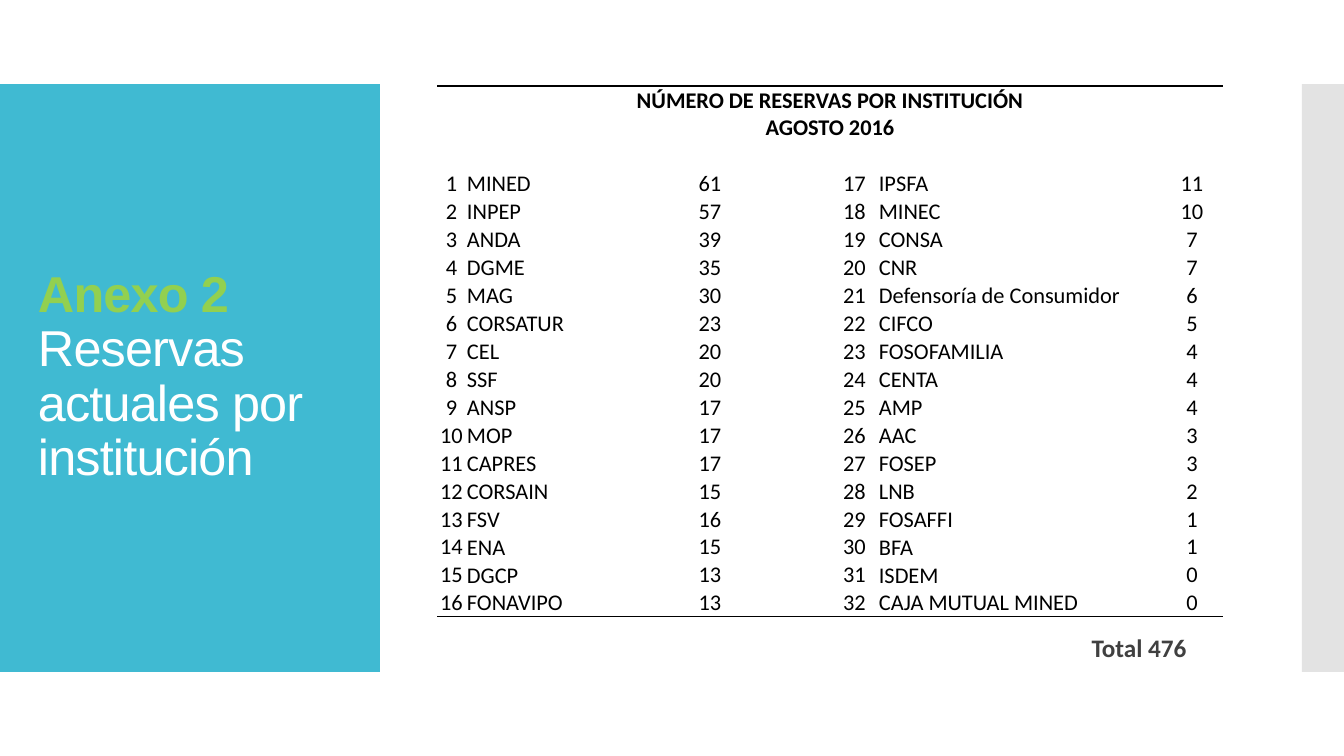
from dataclasses import dataclass
from typing import NamedTuple

from lxml.etree import SubElement
from pptx import Presentation
from pptx.dml.color import RGBColor
from pptx.enum.shapes import MSO_SHAPE
from pptx.enum.text import MSO_ANCHOR, PP_ALIGN
from pptx.oxml import parse_xml
from pptx.oxml.ns import nsdecls, qn
from pptx.util import Pt

SCALE = 914400 / 100.8
COLORS = {
    "panel": "40BAD2",
    "strip": "C8C8C8",
    "accent": "92D050",
    "white": "FFFFFF",
    "black": "000000",
    "gray": "404040",
}
COLS = (29, 215, 58, 92, 47, 283, 62)
HEAD = ("NÚMERO DE RESERVAS POR INSTITUCIÓN", "AGOSTO 2016")
HEAD_H = 83
ROW_H = 28
PLAIN = "{2D5ABB26-0587-4C30-8999-92F81FD0307C}"


class Box(NamedTuple):
    left: int
    top: int
    width: int
    height: int


@dataclass
class Panel:
    box: Box
    color: str
    alpha: int = 100


@dataclass
class Style:
    font: str
    size: int
    color: str
    bold: bool = False


class Entry(NamedTuple):
    name: str
    count: int


PANELS = (
    Panel(Box(0, 84, 380, 588), "panel"),
    Panel(Box(1302, 84, 42, 588), "strip", 50),
)
ENTRIES = [Entry(*pair) for pair in (
    ("MINED", 61), ("INPEP", 57), ("ANDA", 39), ("DGME", 35),
    ("MAG", 30), ("CORSATUR", 23), ("CEL", 20), ("SSF", 20),
    ("ANSP", 17), ("MOP", 17), ("CAPRES", 17), ("CORSAIN", 15),
    ("FSV", 16), ("ENA", 15), ("DGCP", 13), ("FONAVIPO", 13),
    ("IPSFA", 11), ("MINEC", 10), ("CONSA", 7), ("CNR", 7),
    ("Defensoría de Consumidor", 6), ("CIFCO", 5), ("FOSOFAMILIA", 4), ("CENTA", 4),
    ("AMP", 4), ("AAC", 3), ("FOSEP", 3), ("LNB", 2),
    ("FOSAFFI", 1), ("BFA", 1), ("ISDEM", 0), ("CAJA MUTUAL MINED", 0),
)]
HALF = len(ENTRIES) // 2
BODY = Style("Calibri", 16, "black")
BOLD = Style("Calibri", 16, "black", True)


def px(size: int) -> int:
    return round(size * SCALE)


def place(box: Box) -> list[int]:
    return [px(side) for side in box]


def add_run(para, text: str, style: Style):
    run = para.add_run()
    run.text = text
    run.font.name = style.font
    run.font.size = Pt(style.size)
    run.font.bold = style.bold
    run.font.color.rgb = RGBColor.from_string(COLORS[style.color])
    return run


def add_panel(slide, panel: Panel) -> None:
    shape = slide.shapes.add_shape(MSO_SHAPE.RECTANGLE, *place(panel.box))
    shape.shadow.inherit = False
    shape.fill.solid()
    shape.fill.fore_color.rgb = RGBColor.from_string(COLORS[panel.color])
    shape.line.fill.background()
    if panel.alpha < 100:
        tint = shape.fill._xPr.find(".//" + qn("a:srgbClr"))
        SubElement(tint, qn("a:alpha"), val=str(panel.alpha * 1000))


def add_text(slide, box: Box, anchor: MSO_ANCHOR, align: PP_ALIGN):
    frame = slide.shapes.add_textbox(*place(box)).text_frame
    frame.word_wrap = True
    frame.vertical_anchor = anchor
    para = frame.paragraphs[0]
    para.alignment = align
    para.line_spacing = 0.9
    return para


def add_title(slide) -> None:
    para = add_text(slide, Box(28, 124, 325, 507), MSO_ANCHOR.MIDDLE, PP_ALIGN.LEFT)
    label = add_run(para, "Anexo 2", Style("Arial", 36, "accent", True))
    para.add_line_break()
    topic = add_run(para, "Reservas actuales por institución", Style("Arial", 36, "white"))
    for run in (label, topic):
        run.font._element.set("spc", "-60")


def add_total(slide) -> None:
    para = add_text(slide, Box(1056, 631, 166, 38), MSO_ANCHOR.TOP, PP_ALIGN.CENTER)
    add_run(para, "Total 476", Style("Calibri", 18, "gray", True))


def add_rule(cell, side: str) -> None:
    line = parse_xml(
        f'<a:{side} {nsdecls("a")} w="12700"><a:solidFill>'
        f'<a:srgbClr val="{COLORS["black"]}"/></a:solidFill></a:{side}>'
    )
    cell._tc.get_or_add_tcPr().insert(0, line)


def fill_cell(cell, text: str, align: PP_ALIGN, anchor: MSO_ANCHOR) -> None:
    cell.vertical_anchor = anchor
    para = cell.text_frame.paragraphs[0]
    para.alignment = align
    if text:
        add_run(para, text, BODY)
    else:
        SubElement(para._p, qn("a:endParaRPr"), sz=str(BODY.size * 100))


def add_head(grid) -> None:
    cell = grid.cell(0, 0)
    cell.merge(grid.cell(0, len(COLS) - 1))
    cell.vertical_anchor = MSO_ANCHOR.TOP
    frame = cell.text_frame
    for i, text in enumerate(HEAD):
        para = frame.add_paragraph() if i else frame.paragraphs[0]
        para.alignment = PP_ALIGN.CENTER
        add_run(para, text, BOLD)


def add_grid(slide) -> None:
    box = Box(437, 86, sum(COLS), HEAD_H + HALF * ROW_H)
    grid = slide.shapes.add_table(HALF + 1, len(COLS), *place(box)).table
    grid.first_row = False
    grid.horz_banding = False
    grid._tbl.tblPr.find(qn("a:tableStyleId")).text = PLAIN
    for col, width in zip(grid.columns, COLS):
        col.width = px(width)
    for i, row in enumerate(grid.rows):
        row.height = px(ROW_H if i else HEAD_H)
        for cell in row.cells:
            cell.fill.background()
            cell.margin_left = cell.margin_right = cell.margin_top = px(1)
            cell.margin_bottom = 0
            if i == 0:
                add_rule(cell, "lnT")
            elif i == HALF:
                add_rule(cell, "lnB")
    add_head(grid)
    for i in range(HALF):
        left, right = ENTRIES[i], ENTRIES[i + HALF]
        texts = (i + 1, *left, "", i + 1 + HALF, *right)
        for j, text in enumerate(texts):
            named = j in (1, 5)
            align = PP_ALIGN.LEFT if named else PP_ALIGN.CENTER
            anchor = MSO_ANCHOR.MIDDLE if named else MSO_ANCHOR.BOTTOM
            fill_cell(grid.cell(i + 1, j), str(text), align, anchor)


def main() -> None:
    deck = Presentation()
    deck.slide_width, deck.slide_height = px(1344), px(756)
    slide = deck.slides.add_slide(deck.slide_layouts[6])
    for panel in PANELS:
        add_panel(slide, panel)
    add_title(slide)
    add_total(slide)
    add_grid(slide)
    deck.save("out.pptx")


if __name__ == "__main__":
    main()
